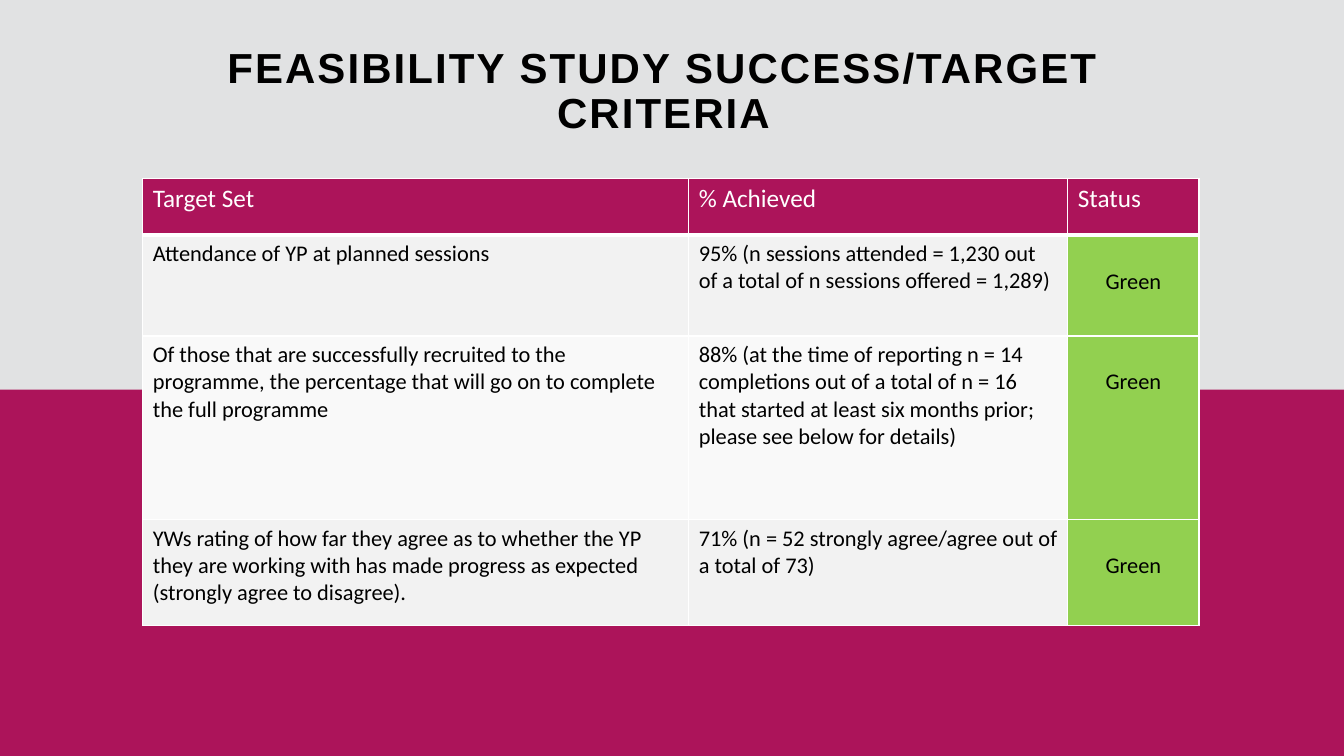
from pptx import Presentation
from pptx.dml.color import RGBColor
from pptx.enum.shapes import MSO_SHAPE as Shape
from pptx.enum.text import MSO_ANCHOR as Anchor, MSO_AUTO_SIZE as AutoSize, PP_ALIGN as Align
from pptx.oxml.ns import qn
from pptx.util import Pt
from lxml.etree import SubElement

PX = 9525  # EMU per px, 96 px to the inch
WIDTH, HEIGHT = 1280, 720

GREY = RGBColor(0xE1, 0xE2, 0xE3)
MAGENTA = RGBColor(0xAC, 0x14, 0x5A)
WHITE = RGBColor(0xFF, 0xFF, 0xFF)
BLACK = RGBColor(0, 0, 0)
GREEN = RGBColor(0x92, 0xD0, 0x50)
BANDS = RGBColor(0xF2, 0xF2, 0xF2), RGBColor(0xF9, 0xF9, 0xF9)

TITLE = "FEASIBILITY STUDY SUCCESS/TARGET CRITERIA"
HEADINGS = ("Target Set", "% Achieved", "Status")
CRITERIA = (
    ("Attendance of YP at planned sessions",
     "95% (n sessions attended = 1,230 out of a total of n sessions offered = 1,289)",
     "Green"),
    ("Of those that are successfully recruited to the programme, the percentage "
     "that will go on to complete the full programme",
     "88% (at the time of reporting n = 14 completions out of a total of n = 16 "
     "that started at least six months prior; please see below for details)",
     "Green"),
    ("YWs rating of how far they agree as to whether the YP they are working with "
     "has made progress as expected (strongly agree to disagree).",
     "71% (n = 52 strongly agree/agree out of a total of 73)",
     "Green"),
)
COLUMN_WIDTHS = (520, 361, 125)
ROW_HEIGHTS = (54, 96, 175, 101)
STATUS_DROP = 31  # puts the status level with the second text line


def px(*lengths):
    return [length * PX for length in lengths]


def write(frame, text, size=16, color=BLACK, font="Calibri", bold=False,
          align=Align.LEFT, line_spacing=None, tracking=None):
    """Fill a text frame with one formatted run; tracking is in points."""
    paragraph = frame.paragraphs[0]
    paragraph.alignment = align
    paragraph.line_spacing = line_spacing
    run = paragraph.add_run()
    run.text = text
    run.font.name, run.font.size, run.font.bold = font, Pt(size), bold
    run.font.color.rgb = color
    if tracking:
        run.font._element.set("spc", str(round(tracking * 100)))


class Deck:
    def __init__(self, background):
        self.presentation = Presentation()
        self.presentation.slide_width, self.presentation.slide_height = px(WIDTH, HEIGHT)
        self.slide = self.presentation.slides.add_slide(self.presentation.slide_layouts[6])
        self.slide.background.fill.solid()
        self.slide.background.fill.fore_color.rgb = background

    def band(self, left, top, width, height, color):
        band = self.slide.shapes.add_shape(Shape.RECTANGLE, *px(left, top, width, height))
        band.shadow.inherit = False
        band.fill.solid()
        band.fill.fore_color.rgb = color
        band.line.fill.background()

    def text(self, left, top, width, height, text, **style):
        frame = self.slide.shapes.add_textbox(*px(left, top, width, height)).text_frame
        frame.word_wrap = True
        frame.auto_size = AutoSize.SHAPE_TO_FIT_TEXT
        frame.vertical_anchor = Anchor.BOTTOM
        frame.margin_left = frame.margin_top = frame.margin_right = frame.margin_bottom = 0
        write(frame, text, **style)

    def table(self, left, top, widths, heights):
        table = self.slide.shapes.add_table(
            len(heights), len(widths), *px(left, top, sum(widths), sum(heights))).table
        for column, width in zip(table.columns, px(*widths)):
            column.width = width
        for row, height in zip(table.rows, px(*heights)):
            row.height = height
        return table

    def cell(self, cell, text, fill, bottom_rule=1, **style):
        """Write a cell with white rules, whose widths are in points."""
        properties = cell._tc.get_or_add_tcPr()
        for side, points in zip("LRTB", (1, 1, 1, bottom_rule)):
            rule = SubElement(properties, qn(f"a:ln{side}"), w=str(Pt(points)))
            SubElement(SubElement(rule, qn("a:solidFill")), qn("a:srgbClr"), val=str(WHITE))
        cell.fill.solid()
        cell.fill.fore_color.rgb = fill
        write(cell.text_frame, text, **style)


def main():
    deck = Deck(GREY)
    deck.band(0, 371, WIDTH, HEIGHT - 371, MAGENTA)
    deck.text(168, 44, 928, 87, TITLE, size=30, font="Arial", bold=True,
              align=Align.CENTER, line_spacing=0.9, tracking=1.5)

    table = deck.table(136, 170, COLUMN_WIDTHS, ROW_HEIGHTS)
    for column, heading in enumerate(HEADINGS):
        deck.cell(table.cell(0, column), heading, MAGENTA, bottom_rule=3, size=18, color=WHITE)
    for row, (target, achieved, status) in enumerate(CRITERIA, start=1):
        shade = BANDS[(row - 1) % 2]
        deck.cell(table.cell(row, 0), target, shade)
        deck.cell(table.cell(row, 1), achieved, shade)
        status_cell = table.cell(row, 2)
        deck.cell(status_cell, status, GREEN, align=Align.CENTER)
        status_cell.margin_top = STATUS_DROP * PX

    deck.presentation.save("out.pptx")


if __name__ == "__main__":
    main()
